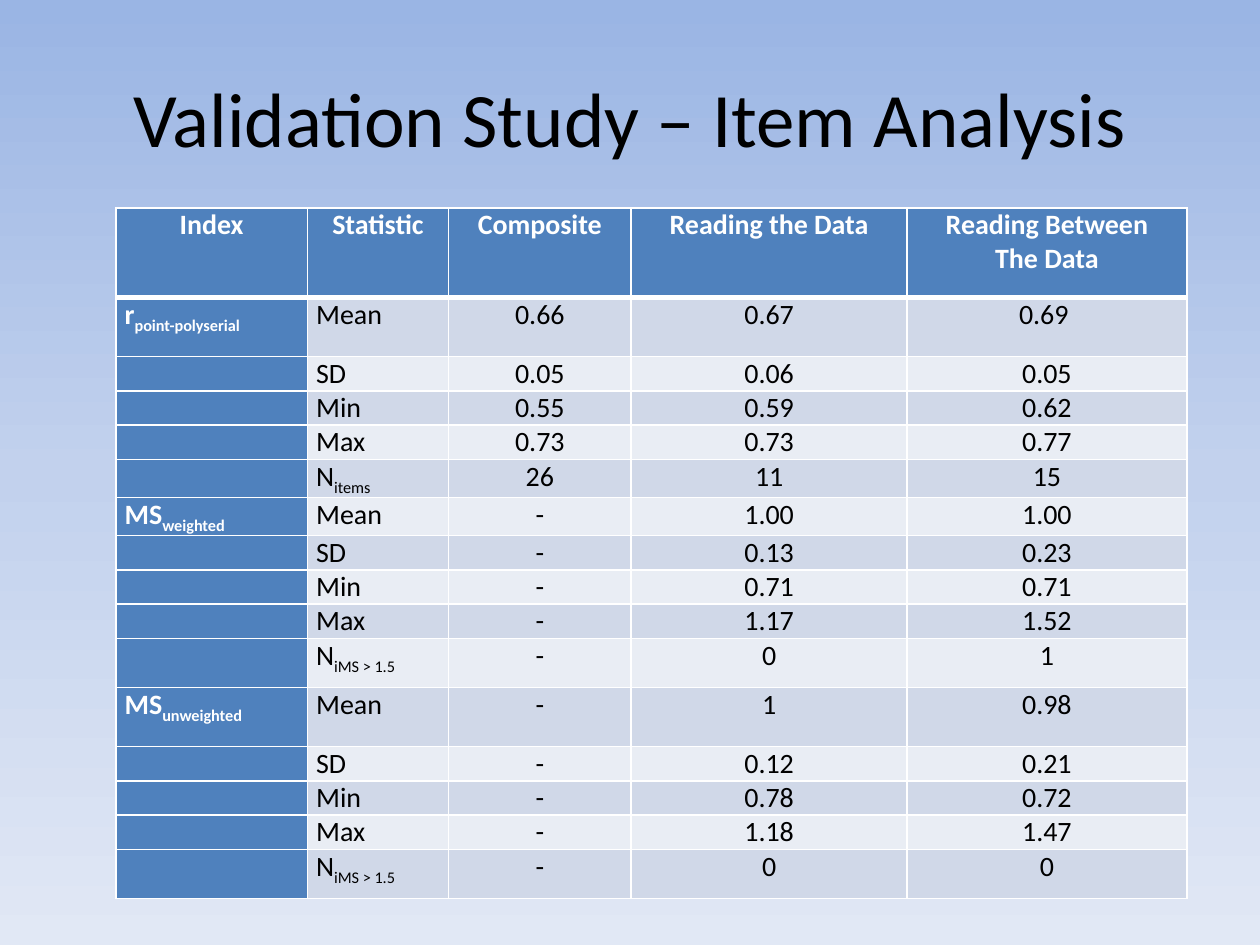
from copy import deepcopy
from dataclasses import dataclass

from lxml.etree import SubElement
from pptx import Presentation
from pptx.dml.color import RGBColor
from pptx.enum.text import MSO_ANCHOR, PP_ALIGN
from pptx.oxml.ns import qn
from pptx.util import Inches, Pt

WHITE = RGBColor(0xFF, 0xFF, 0xFF)
BLACK = RGBColor(0x00, 0x00, 0x00)
BLUE = RGBColor(0x4F, 0x81, 0xBD)
BANDS = (RGBColor(0xD0, 0xD8, 0xE8), RGBColor(0xE9, 0xED, 0xF4))
SKY = (
    (0, RGBColor(0x9A, 0xB5, 0xE4)),
    (0.5, RGBColor(0xC2, 0xD1, 0xED)),
    (1, RGBColor(0xE1, 0xE8, 0xF5)),
)

WIDE, HIGH = Inches(10), Inches(7.5)
COLS = (1.52, 1.12, 1.45, 2.19, 2.22)
LINE, TALL, MID, HEAD = 0.27, 0.47, 0.39, 0.71
HEADS = ("Index", "Statistic", "Composite", "Reading the Data",
         "Reading Between\nThe Data")
BODY = {"name": "Calibri", "size": Pt(16), "bold": False}
BOLD = {**BODY, "bold": True}
INSET = {"margin_left": Inches(0.07), "margin_right": Inches(0.07),
         "margin_top": 0, "margin_bottom": 0}


@dataclass
class Group:
    name: str
    count: str
    first: float
    last: float
    rows: tuple


GROUPS = (
    Group("r_point-polyserial", "N_items", TALL, LINE, (
        ("0.66", "0.67", "0.69 "),
        ("0.05", "0.06", "0.05"),
        ("0.55", "0.59", "0.62"),
        ("0.73", "0.73", "0.77"),
        ("26", "11", "15"),
    )),
    Group("MS_weighted", "N_iMS > 1.5", LINE, MID, (
        ("-", "1.00", "1.00"),
        ("-", "0.13", "0.23"),
        ("-", "0.71", "0.71"),
        ("-", "1.17", "1.52"),
        ("-", "0", "1"),
    )),
    Group("MS_unweighted", "N_iMS > 1.5", TALL, MID, (
        ("-", "1", "0.98"),
        ("-", "0.12", "0.21"),
        ("-", "0.78", "0.72"),
        ("-", "1.18", "1.47"),
        ("-", "0", "0"),
    )),
)


def style(item, values: dict) -> None:
    for key, value in values.items():
        setattr(item, key, value)


def write(para, text: str, font: dict, color: RGBColor) -> None:
    if not text:
        SubElement(para._p, qn("a:endParaRPr"), sz=str(int(font["size"].pt * 100)))
        return
    for part, word in enumerate(text.split("_")):
        run = para.add_run()
        run.text = word
        style(run.font, font)
        run.font.color.rgb = color
        if part:
            run.font._element.set("baseline", "-25000")


def edge(cell, top: float, base: float) -> None:
    props = cell._tc.get_or_add_tcPr()
    for side, width in (("L", 1), ("R", 1), ("T", top), ("B", base)):
        line = SubElement(props, qn(f"a:ln{side}"), w=str(Pt(width)))
        fill = SubElement(line, qn("a:solidFill"))
        SubElement(fill, qn("a:srgbClr"), val=str(WHITE))


def draw(cell, text: str, row: int, col: int) -> None:
    dark = row == 0 or col == 0
    edge(cell, 3 if row == 1 else 1, 3 if row == 0 else 1)
    cell.fill.solid()
    cell.fill.fore_color.rgb = BLUE if dark else BANDS[(row - 1) % 2]
    style(cell, INSET)
    frame = cell.text_frame
    for spot, line in enumerate(text.split("\n")):
        para = frame.add_paragraph() if spot else frame.paragraphs[0]
        para.alignment = PP_ALIGN.CENTER if row == 0 or col > 1 else PP_ALIGN.LEFT
        write(para, line, BOLD if dark else BODY, WHITE if dark else BLACK)


def paint(slide) -> None:
    fill = slide.background.fill
    fill.gradient()
    fill.gradient_angle = 270
    stops = slide.element.find(f".//{qn('a:gsLst')}")
    stops.insert(1, deepcopy(stops[0]))
    for stop, (place, color) in zip(fill.gradient_stops, SKY):
        stop.position = place
        stop.color.rgb = color


def head(slide) -> None:
    title = slide.shapes.title
    style(title, {"left": int(WIDE * 0.05), "top": int(HIGH * 0.04),
                  "width": int(WIDE * 0.9), "height": Inches(1.25)})
    title.text_frame.vertical_anchor = MSO_ANCHOR.MIDDLE
    para = title.text_frame.paragraphs[0]
    para.alignment = PP_ALIGN.CENTER
    write(para, "Validation Study – Item Analysis",
          {"name": "Calibri", "size": Pt(44)}, BLACK)


def grid(slide) -> None:
    rows, sizes = [HEADS], [HEAD]
    for group in GROUPS:
        stats = ("Mean", "SD", "Min", "Max", group.count)
        names = (group.name, "", "", "", "")
        rows += [(name, stat, *data)
                 for name, stat, data in zip(names, stats, group.rows)]
        sizes += [group.first, LINE, LINE, LINE, group.last]
    table = slide.shapes.add_table(
        len(rows), len(COLS), Inches(0.92), int(HIGH * 0.22),
        Inches(sum(COLS)), Inches(sum(sizes))).table
    table.first_col = True
    for col, width in zip(table.columns, COLS):
        col.width = Inches(width)
    for row, (texts, size) in enumerate(zip(rows, sizes)):
        table.rows[row].height = Inches(size)
        for col, text in enumerate(texts):
            draw(table.cell(row, col), text, row, col)


def main() -> None:
    deck = Presentation()
    style(deck, {"slide_width": WIDE, "slide_height": HIGH})
    slide = deck.slides.add_slide(deck.slide_layouts[5])
    paint(slide)
    head(slide)
    grid(slide)
    deck.save("out.pptx")


if __name__ == "__main__":
    main()
